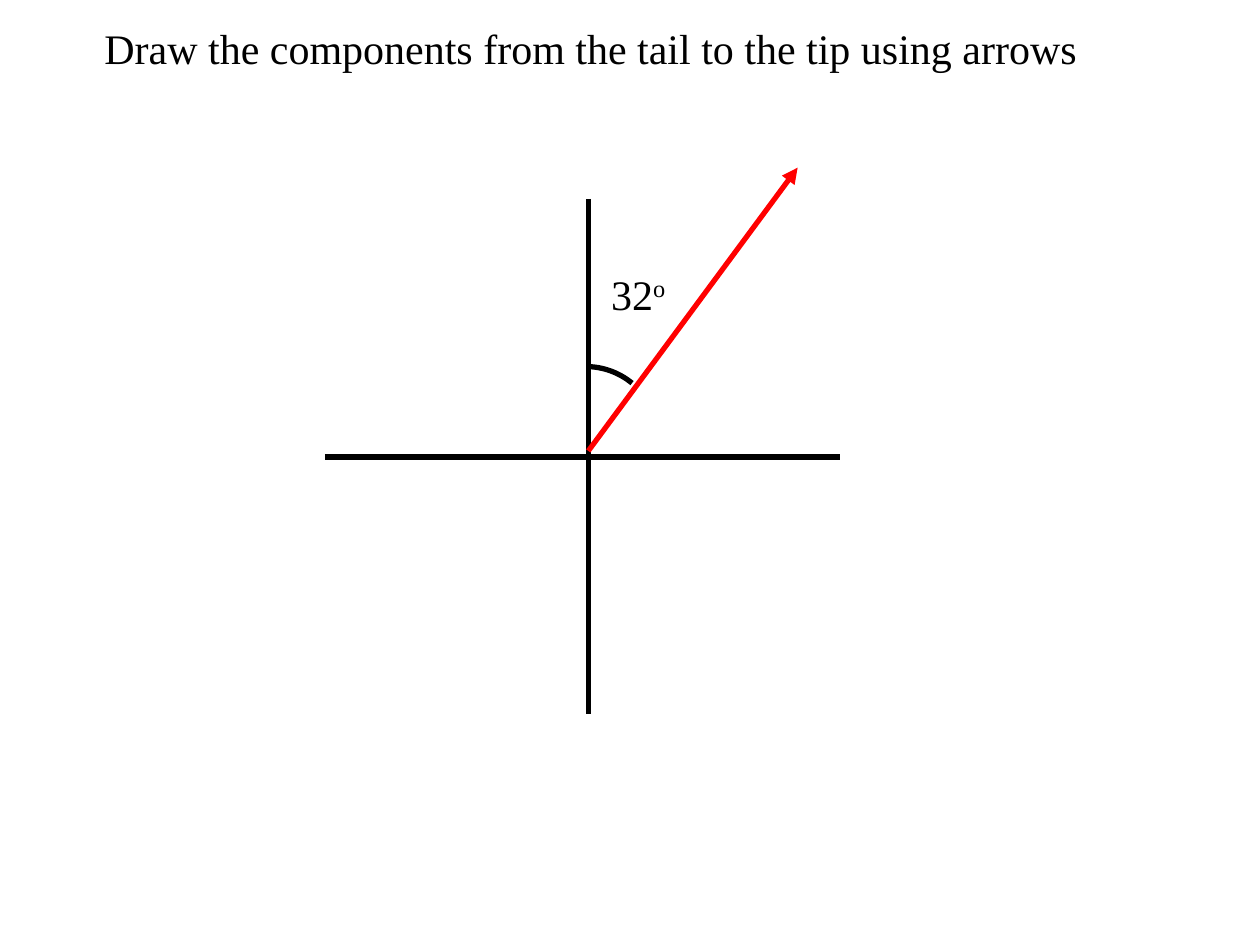
"""Build a slide showing a vector at 32 degrees from the vertical axis."""
from lxml import etree
from pptx import Presentation
from pptx import util as u
from pptx.dml.color import RGBColor
from pptx.enum import shapes, text
from pptx.oxml.ns import qn

BLACK = RGBColor(0x00, 0x00, 0x00)
RED = RGBColor(0xFF, 0x00, 0x00)


class Sketch:
    font = "Times New Roman"
    size = u.Pt(24)
    weight = u.Pt(3)

    def __init__(self, slide):
        self.slide = slide

    def letter(self, holder, wording, left, top, width, height):
        holder.left, holder.top = u.Cm(left), u.Cm(top)
        holder.width, holder.height = u.Cm(width), u.Cm(height)
        frame = holder.text_frame
        frame.text = wording
        frame.word_wrap = False
        frame.auto_size = text.MSO_AUTO_SIZE.SHAPE_TO_FIT_TEXT
        frame.vertical_anchor = text.MSO_ANCHOR.TOP
        paragraph = frame.paragraphs[0]
        paragraph.alignment = text.PP_ALIGN.LEFT
        paragraph.line_spacing = 1.0
        paragraph.space_before = u.Pt(0)
        for run in paragraph.runs:
            self.style(run)
        return paragraph

    def style(self, run):
        run.font.name = self.font
        run.font.size = self.size
        run.font.color.rgb = BLACK

    def title(self, wording, *box):
        self.letter(self.slide.shapes.title, wording, *box)

    def degrees(self, value, *box):
        label = self.slide.shapes.add_textbox(0, 0, 0, 0)
        sign = self.letter(label, value, *box).add_run()
        sign.text = "o"
        self.style(sign)
        sign._r.get_or_add_rPr().set("baseline", "30000")

    def line(self, start, end, color=BLACK, arrow=False):
        stroke = self.slide.shapes.add_connector(
            shapes.MSO_CONNECTOR.STRAIGHT, *map(u.Cm, start + end))
        stroke.line.color.rgb = color
        stroke.line.width = self.weight
        properties = stroke._element.spPr
        if arrow:
            etree.SubElement(properties.find(qn("a:ln")), qn("a:tailEnd"), type="triangle")
        etree.SubElement(properties, qn("a:effectLst"))

    def arc(self, center, radius, start, end):
        x, y = center
        curve = self.slide.shapes.add_shape(
            shapes.MSO_SHAPE.ARC, u.Cm(x - radius), u.Cm(y - radius),
            u.Cm(2 * radius), u.Cm(2 * radius))
        for index, angle in enumerate((start, end)):
            curve.adjustments[index] = angle * 0.6
        curve.shadow.inherit = False
        curve.fill.background()
        curve.line.color.rgb = BLACK
        curve.line.width = self.weight


def main():
    deck = Presentation()
    deck.slide_width, deck.slide_height = u.Cm(25.4), u.Cm(19.05)
    sketch = Sketch(deck.slides.add_slide(deck.slide_layouts[5]))
    axis_x, axis_y = 11.86, 9.21
    sketch.line((6.55, axis_y), (16.94, axis_y))
    sketch.line((axis_x, 4.01), (axis_x, 14.4))
    sketch.title("Draw the components from the tail to the tip using arrows",
                 1.85, 0.33, 20.32, 1.27)
    sketch.line((axis_x, 9.09), (16.08, 3.38), RED, arrow=True)
    sketch.arc((11.81, 8.86), 1.47, 273, 309.4)
    sketch.degrees("32", 12.07, 5.28, 1.65, 1.27)
    deck.save("out.pptx")


if __name__ == "__main__":
    main()
